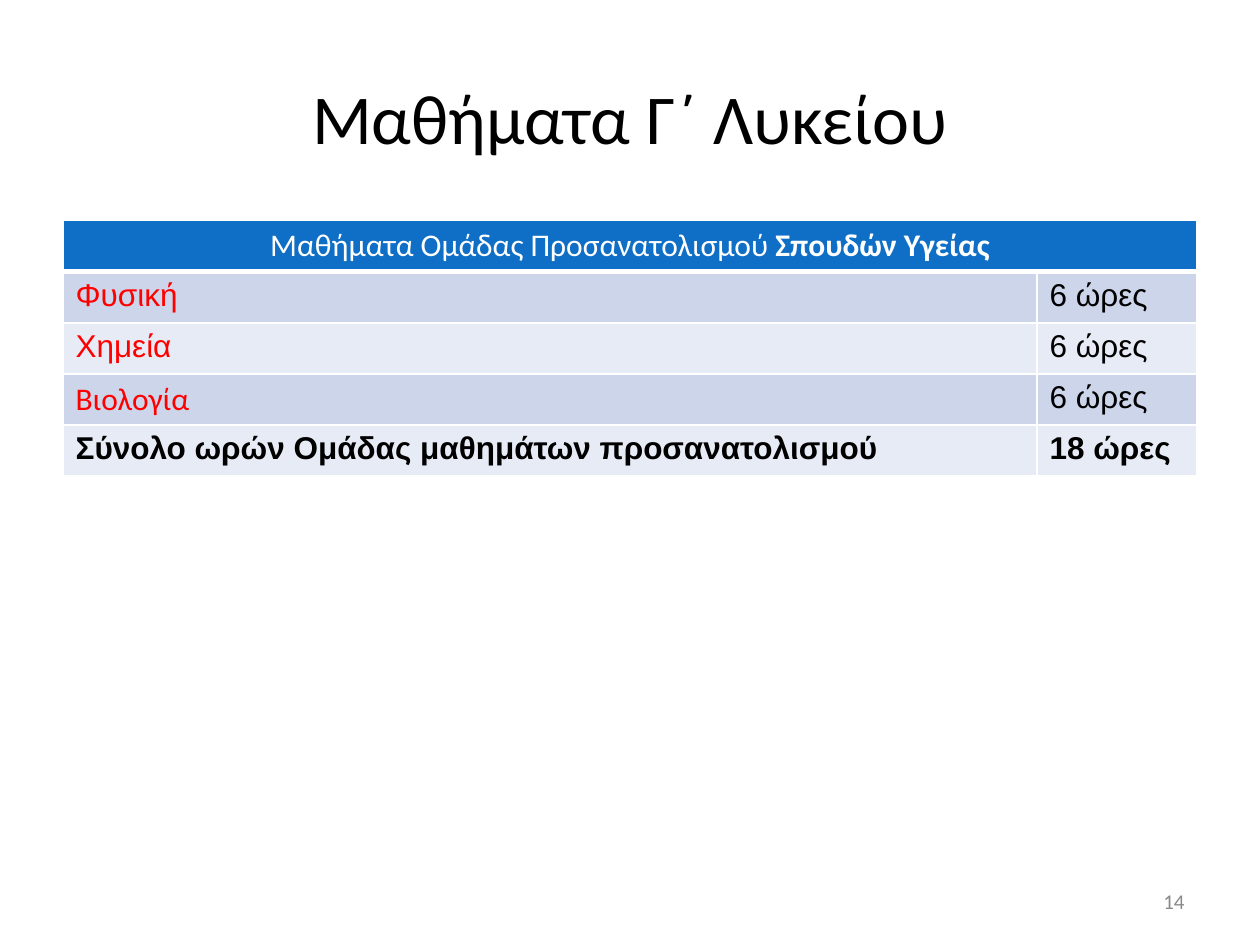
from lxml import etree
from pptx import Presentation, util as u
from pptx.dml.color import RGBColor
from pptx.enum import text
from pptx.oxml import ns

prs = Presentation()
prs.slide_width, prs.slide_height = u.Inches(10), u.Inches(7.5)
W, H = prs.slide_width, prs.slide_height
s = prs.slides.add_slide(prs.slide_layouts[6])
MARGIN = 0.05 * W
AL = text.PP_ALIGN


def write(tf, runs, align, size, color, font="Calibri"):
    """Fill the first paragraph with (text, bold) runs."""
    p = tf.paragraphs[0]
    p.alignment = align
    for words, bold in runs:
        r = p.add_run()
        r.text = words
        r.font.size, r.font.name, r.font.bold = u.Pt(size), font, bold
        r.font.color.rgb = RGBColor.from_string(color)


def style(cell, fill, bottom=1):
    """Give a cell white borders and a solid fill."""
    tcPr = cell._tc.get_or_add_tcPr()
    for side, pt in (("L", 1), ("R", 1), ("T", 1), ("B", bottom)):
        ln = etree.SubElement(tcPr, ns.qn("a:ln" + side), w=str(u.Pt(pt)))
        solid = etree.SubElement(ln, ns.qn("a:solidFill"))
        etree.SubElement(solid, ns.qn("a:srgbClr"), val="FFFFFF")
    cell.fill.solid()
    cell.fill.fore_color.rgb = RGBColor.from_string(fill)


# Title and slide number
for words, x, y, w, h, align, size, color in (
    ("Μαθήματα Γ΄ Λυκείου", 0.05, 0.04, 0.9, 1 / 6, AL.CENTER, 40, "000000"),
    ("14", 0.717, 0.927, 0.233, 0.053, AL.RIGHT, 12, "898989"),
):
    tf = s.shapes.add_textbox(int(x * W), int(y * H), int(w * W), int(h * H)).text_frame
    tf.word_wrap = True
    tf.vertical_anchor = text.MSO_ANCHOR.MIDDLE
    write(tf, [(words, False)], align, size, color)

# Timetable
lessons = [
    ("Φυσική", "6 ώρες", "Arial", "FF0000", False),
    ("Χημεία", "6 ώρες", "Arial", "FF0000", False),
    ("Βιολογία", "6 ώρες", "Calibri", "FF0000", False),
    ("Σύνολο ωρών Ομάδας μαθημάτων προσανατολισμού", "18 ώρες", "Arial", "000000", True),
]
rows = len(lessons) + 1
tbl = s.shapes.add_table(rows, 2, int(MARGIN), u.Inches(1.75),
                         int(W - 2 * MARGIN), u.Inches(2.03)).table
tbl.columns[0].width, tbl.columns[1].width = u.Inches(7.73), u.Inches(1.27)

# Header across both columns
for cell in tbl.rows[0].cells:
    style(cell, "0F6FC6", bottom=3)
tbl.cell(0, 0).merge(tbl.cell(0, 1))
write(tbl.cell(0, 0).text_frame,
      [("Μαθήματα Ομάδας Προσανατολισμού ", False), ("Σπουδών Υγείας", True)],
      AL.CENTER, 18, "FFFFFF")

# Lesson rows in alternating bands
for i, (lesson, hours, font, color, bold) in enumerate(lessons, 1):
    for cell in tbl.rows[i].cells:
        style(cell, "CCD5EA" if i % 2 else "E7EBF5")
    write(tbl.cell(i, 0).text_frame, [(lesson, bold)], AL.LEFT, 18, color, font)
    write(tbl.cell(i, 1).text_frame, [(hours, bold)], AL.LEFT, 18, "000000", "Arial")

prs.save("out.pptx")
